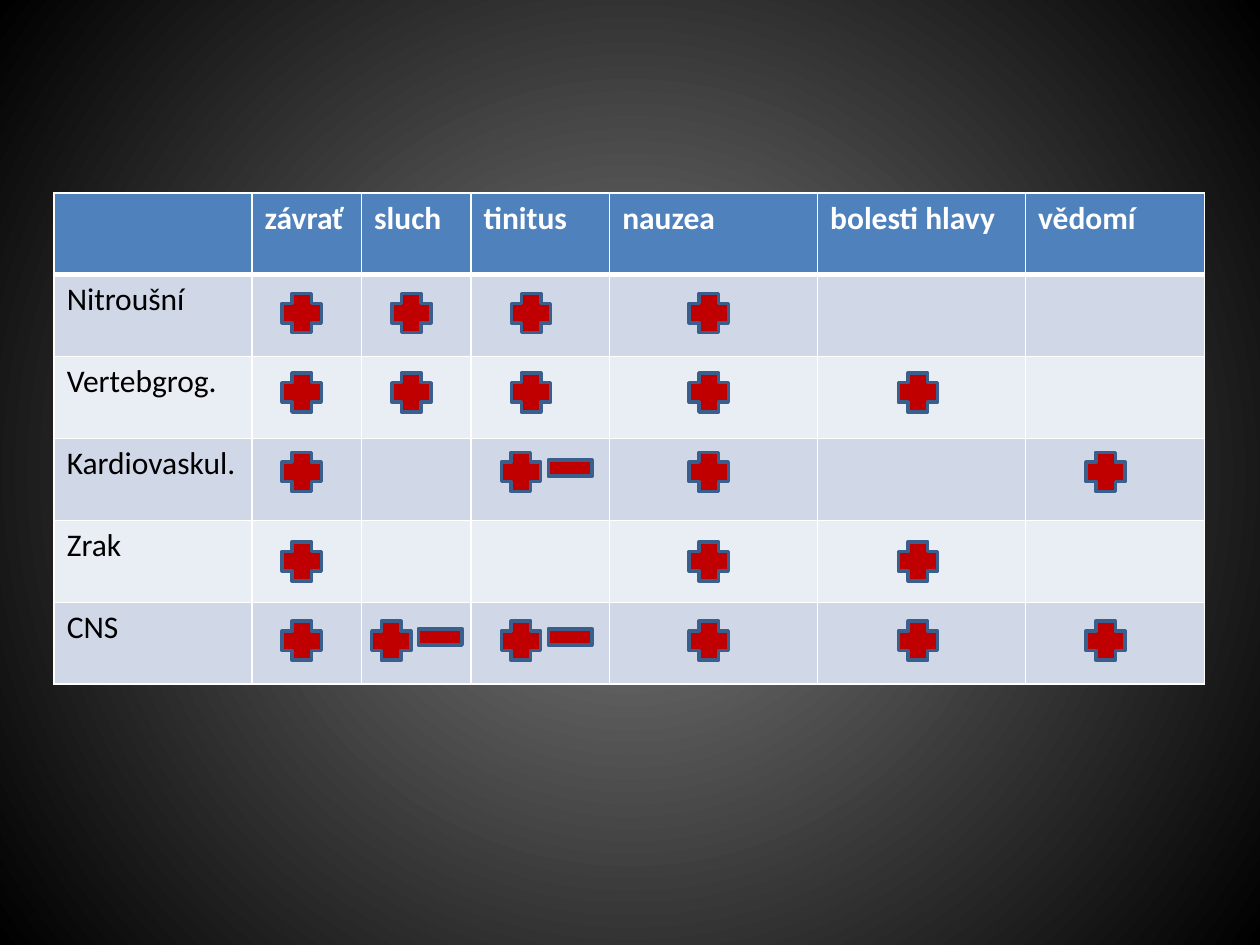
from dataclasses import dataclass

from pptx import Presentation
from pptx.dml.color import RGBColor
from pptx.enum.shapes import MSO_SHAPE
from pptx.oxml.ns import qn
from pptx.util import Inches, Pt
from lxml import etree

PLUS = MSO_SHAPE.CROSS
MINUS = MSO_SHAPE.MATH_MINUS


@dataclass(frozen=True)
class Theme:
    font: str = "Calibri"
    text_size: int = 18
    glow: str = "7F7F7F"
    edge: str = "000000"
    header: str = "4F81BD"
    bands: tuple = ("D0D8E8", "E9EDF4")
    header_text: str = "FFFFFF"
    body_text: str = "000000"
    border: str = "FFFFFF"
    thin: int = 1
    thick: int = 3
    mark: str = "C00000"
    mark_line: str = "3A5F8C"
    mark_line_width: int = 2


HEADINGS = ["", "závrať", "sluch", "tinitus", "nauzea", "bolesti hlavy", "vědomí"]
COLUMN_WIDTHS = [1.57, 0.87, 0.87, 1.1, 1.65, 1.65, 1.42]
ROW_HEIGHT = 0.65
TABLE_LEFT, TABLE_TOP = 0.43, 1.53

# Row label, top of its marks, one mark per symptom
FINDINGS = [
    ("Nitroušní", 2.33, ["+", "+", "+", "+", "", ""]),
    ("Vertebgrog.", 2.96, ["+", "+", "+", "+", "+", ""]),
    ("Kardiovaskul.", 3.59, ["+", "", "+-", "+", "", "+"]),
    ("Zrak", 4.3, ["+", "", "", "+", "+", ""]),
    ("CNS", 4.93, ["+", "+-", "+-", "+", "+", "+"]),
]
MARK_LEFTS = [2.24, 3.11, 4.06, 5.47, 7.13, 8.62]
PAIR_LEFTS = {1: 2.95, 2: 3.98}  # a plus that shares its cell with a minus
PLUS_SIZE = 0.31
MINUS_WIDTH, MINUS_HEIGHT = 0.47, 0.55
MINUS_RISE = 0.15


class SlideBuilder:
    def __init__(self, slide, theme):
        self.slide = slide
        self.theme = theme

    def background(self):
        fill = self.slide.background.fill
        fill.gradient()
        colors = (self.theme.glow, self.theme.edge)
        for stop, color, position in zip(fill.gradient_stops, colors, (0, 1)):
            stop.color.rgb = RGBColor.from_string(color)
            stop.position = position
        # Turn the linear gradient into a circular one
        gradient = self.slide.element.find(".//" + qn("a:gradFill"))
        linear = gradient.find(qn("a:lin"))
        circle = etree.Element(qn("a:path"), {"path": "circle"})
        etree.SubElement(circle, qn("a:fillToRect"),
                         {side: "50000" for side in "ltrb"})
        gradient.replace(linear, circle)

    def table(self, rows):
        frame = self.slide.shapes.add_table(
            len(rows), len(COLUMN_WIDTHS), Inches(TABLE_LEFT), Inches(TABLE_TOP),
            Inches(sum(COLUMN_WIDTHS)), Inches(ROW_HEIGHT * len(rows)))
        table = frame.table
        for column, width in zip(table.columns, COLUMN_WIDTHS):
            column.width = Inches(width)
        for row_index, texts in enumerate(rows):
            table.rows[row_index].height = Inches(ROW_HEIGHT)
            for column_index, text in enumerate(texts):
                self.cell(table.cell(row_index, column_index), text, row_index)

    def cell(self, cell, text, row_index):
        theme = self.theme
        is_header = row_index == 0
        fill = theme.header if is_header else theme.bands[(row_index - 1) % 2]
        cell.fill.solid()
        cell.fill.fore_color.rgb = RGBColor.from_string(fill)
        cell.text_frame.text = text
        font = cell.text_frame.paragraphs[0].font
        for span in cell.text_frame.paragraphs[0].runs:
            font = span.font
        font.name = theme.font
        font.size = Pt(theme.text_size)
        font.bold = is_header
        font.color.rgb = RGBColor.from_string(
            theme.header_text if is_header else theme.body_text)
        self.borders(cell, row_index)

    def borders(self, cell, row_index):
        theme = self.theme
        widths = {
            "L": theme.thin,
            "R": theme.thin,
            "T": theme.thick if row_index == 1 else theme.thin,
            "B": theme.thick if row_index == 0 else theme.thin,
        }
        properties = cell._tc.get_or_add_tcPr()
        for index, (side, width) in enumerate(widths.items()):
            line = etree.Element(qn("a:ln" + side), {"w": str(Pt(width))})
            solid = etree.SubElement(line, qn("a:solidFill"))
            etree.SubElement(solid, qn("a:srgbClr"), {"val": theme.border})
            properties.insert(index, line)

    def mark(self, kind, left, top, width, height):
        shape = self.slide.shapes.add_shape(
            kind, Inches(left), Inches(top), Inches(width), Inches(height))
        shape.shadow.inherit = False
        shape.fill.solid()
        shape.fill.fore_color.rgb = RGBColor.from_string(self.theme.mark)
        shape.line.color.rgb = RGBColor.from_string(self.theme.mark_line)
        shape.line.width = Pt(self.theme.mark_line_width)

    def finding(self, symbol, column, top):
        is_pair = symbol == "+-"
        left = PAIR_LEFTS[column] if is_pair else MARK_LEFTS[column]
        self.mark(PLUS, left, top, PLUS_SIZE, PLUS_SIZE)
        if is_pair:
            self.mark(MINUS, left + PLUS_SIZE, top - MINUS_RISE,
                      MINUS_WIDTH, MINUS_HEIGHT)


def main():
    deck = Presentation()
    deck.slide_width, deck.slide_height = Inches(10), Inches(7.5)
    page = SlideBuilder(deck.slides.add_slide(deck.slide_layouts[6]), Theme())

    page.background()

    # Table with row labels; the symptom cells stay empty
    blanks = [""] * (len(HEADINGS) - 1)
    page.table([HEADINGS] + [[label] + blanks for label, _, _ in FINDINGS])

    # Marks laid over the table
    for _, top, symbols in FINDINGS:
        for column, symbol in enumerate(symbols):
            if symbol:
                page.finding(symbol, column, top)

    deck.save("out.pptx")


if __name__ == "__main__":
    main()
